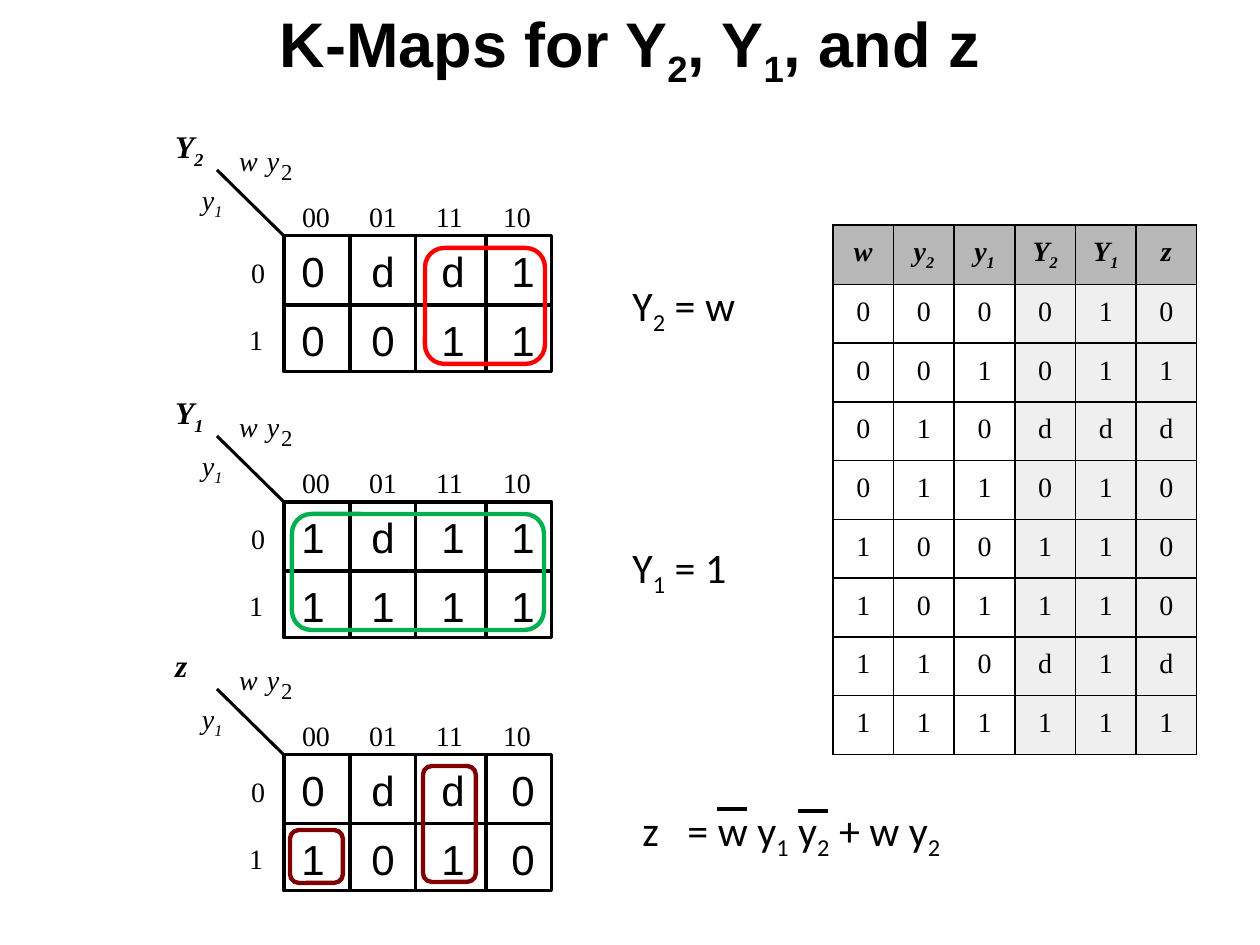
import pptx
import pptx.dml.color
import pptx.enum.shapes
import pptx.enum.text
import pptx.oxml.ns
import pptx.util
from lxml import etree

PX_PER_INCH = 126
BLACK = "000000"
SERIF = "Times New Roman"
CENTER = pptx.enum.text.PP_ALIGN.CENTER
SHAPES = pptx.enum.shapes.MSO_SHAPE

MAP_LEFT = 284
# name, top of grid, rows of values
K_MAPS = [
    ("Y_2", 236, ["0dd1", "0011"]),
    ("Y_1", 502, ["1d11", "1111"]),
    ("z", 755, ["0dd0", "1010"]),
]
# left, top, width, height, colour
LOOPS = [
    (292, 514, 252, 116, "00B050"),
    (423, 766, 53, 116, "800000"),
    (290, 830, 53, 53, "800000"),
    (425, 248, 120, 116, "FF0000"),
]
TRUTH_TABLE = [
    ["w", "y_2", "y_1", "Y_2", "Y_1", "z"],
    *map(list, ["000010", "001011", "010ddd", "011010",
                "100110", "101110", "110d1d", "111111"]),
]


def px(length):
    return pptx.util.Emu(round(length * 914400 / PX_PER_INCH))


def color(value):
    return pptx.dml.color.RGBColor.from_string(value)


def add_element(parent, tag, **attributes):
    return etree.SubElement(parent, pptx.oxml.ns.qn(tag), attributes)


def write_text(frame, text, *, size, font=SERIF, bold=False, italic=False,
               align=None, space_before=0, tabs=()):
    """Write one paragraph per line; the character after "_" is a subscript."""
    for index, line in enumerate(text.split("\n")):
        paragraph = frame.add_paragraph() if index else frame.paragraphs[0]
        paragraph.alignment = align
        if index:
            paragraph.space_before = pptx.util.Pt(space_before)
        if tabs:
            tab_list = add_element(paragraph._p.get_or_add_pPr(), "a:tabLst")
            for position in tabs:
                add_element(tab_list, "a:tab", pos=str(px(position)), algn="l")
        first, *others = line.split("_")
        pieces = [(first, False)]
        for part in others:
            pieces += [(part[0], True), (part[1:], False)]
        for piece, subscript in pieces:
            if not piece:
                continue
            run = paragraph.add_run()
            run.text = piece
            run.font.size = pptx.util.Pt(size)
            run.font.name = font
            run.font.bold = bold
            run.font.italic = italic
            run.font.color.rgb = color(BLACK)
            if subscript:
                run._r.get_or_add_rPr().set("baseline", "-25000")


def add_text(shapes, left, top, width, height, text, *, inset=True,
             anchor=pptx.enum.text.MSO_ANCHOR.TOP, **text_format):
    frame = shapes.add_textbox(px(left), px(top), px(width), px(height)).text_frame
    frame.word_wrap = True
    frame.vertical_anchor = anchor
    if not inset:
        frame.margin_left = frame.margin_right = 0
        frame.margin_top = frame.margin_bottom = 0
    write_text(frame, text, **text_format)


def add_line(shapes, x1, y1, x2, y2, weight=1.75):
    line = shapes.add_connector(pptx.enum.shapes.MSO_CONNECTOR.STRAIGHT,
                                px(x1), px(y1), px(x2), px(y2))
    line.line.color.rgb = color(BLACK)
    line.line.width = pptx.util.Pt(weight)
    add_element(line._element.spPr, "a:effectLst")


def add_outline(shapes, kind, left, top, width, height, line_color, weight):
    shape = shapes.add_shape(kind, px(left), px(top), px(width), px(height))
    shape.shadow.inherit = False
    shape.fill.background()
    shape.line.color.rgb = color(line_color)
    shape.line.width = pptx.util.Pt(weight)


def add_k_map(slide, name, top, rows):
    shapes = slide.shapes.add_group_shape().shapes
    left = MAP_LEFT
    for x, width, middle in [(0, 132, 66), (132, 136, 202)]:
        add_outline(shapes, SHAPES.RECTANGLE, left + x, top, width, 136, BLACK, 1.75)
        add_line(shapes, left + x, top + 69, left + x + width, top + 69)
        add_line(shapes, left + middle, top, left + middle, top + 136)
    add_line(shapes, left - 67, top - 66, left, top)

    def add_label(x, y, width, text, size=16, **text_format):
        add_text(shapes, left + x, top + y, width, 34, text,
                 inset=False, size=size, **text_format)

    add_label(-109, -109, 42, name, size=18, bold=True, italic=True)
    add_label(-82, -53, 25, "y_1", italic=True)
    add_label(-45, -92, 19, "w", italic=True)
    add_label(-17, -92, 19, "y", italic=True)
    add_label(-3, -78, 18, "2", size=13)
    for column, code in enumerate(["00", "01", "11", "10"]):
        add_label(18 + 67 * column, -36, 46, code)
    add_label(-33, 20, 21, "0")
    add_label(-35, 87, 21, "1")
    add_text(shapes, left + 5, top + 3, 261, 131,
             "\n".join("\t".join(row) for row in rows),
             size=24, font="Arial", space_before=10.7, tabs=(70, 140, 210))


def add_cell_borders(cell):
    properties = cell._tc.get_or_add_tcPr()
    for index, side in enumerate(["a:lnL", "a:lnR", "a:lnT", "a:lnB"]):
        border = etree.Element(pptx.oxml.ns.qn(side), w="12700")
        add_element(add_element(border, "a:solidFill"), "a:srgbClr", val=BLACK)
        properties.insert(index, border)


def add_truth_table(slide):
    table = slide.shapes.add_table(len(TRUTH_TABLE), len(TRUTH_TABLE[0]),
                                   px(833), px(225), px(364), px(529)).table
    table.first_row = table.horz_banding = False
    for row, values in enumerate(TRUTH_TABLE):
        header = row == 0
        for column, value in enumerate(values):
            cell = table.cell(row, column)
            cell.margin_left = cell.margin_right = px(12)
            cell.margin_top = cell.margin_bottom = px(12)
            if header or column >= 3:
                cell.fill.solid()
                cell.fill.fore_color.rgb = color("B7B7B7" if header else "EFEFEF")
            else:
                cell.fill.background()
            add_cell_borders(cell)
            write_text(cell.text_frame, value, size=16, bold=header,
                       italic=header, align=CENTER)


def add_equations(slide):
    equation_format = {"size": 24, "font": "Calibri"}
    add_text(slide.shapes, 620, 273, 131, 64, "Y_2 = w", **equation_format)
    add_text(slide.shapes, 620, 535, 122, 64, "Y_1 = 1", **equation_format)
    shapes = slide.shapes.add_group_shape().shapes
    add_text(shapes, 630, 798, 331, 64, "z\t= w y_1 y_2 + w y_2",
             tabs=(45,), **equation_format)
    for x, y in [(717, 809), (798, 811)]:
        add_line(shapes, x, y, x + 30, y, weight=2.25)


def main():
    presentation = pptx.Presentation()
    presentation.slide_width = px(1260)
    presentation.slide_height = px(945)
    slide = presentation.slides.add_slide(presentation.slide_layouts[6])
    add_truth_table(slide)
    add_text(slide.shapes, 0, 0, 1260, 94, "K-Maps for Y_2, Y_1, and z",
             anchor=pptx.enum.text.MSO_ANCHOR.MIDDLE, size=36, font="Arial",
             bold=True, align=CENTER)
    for name, top, rows in K_MAPS:
        add_k_map(slide, name, top, rows)
    for *box, line_color in LOOPS:
        add_outline(slide.shapes, SHAPES.ROUNDED_RECTANGLE, *box, line_color, 2.5)
    add_equations(slide)
    presentation.save("out.pptx")


if __name__ == "__main__":
    main()
